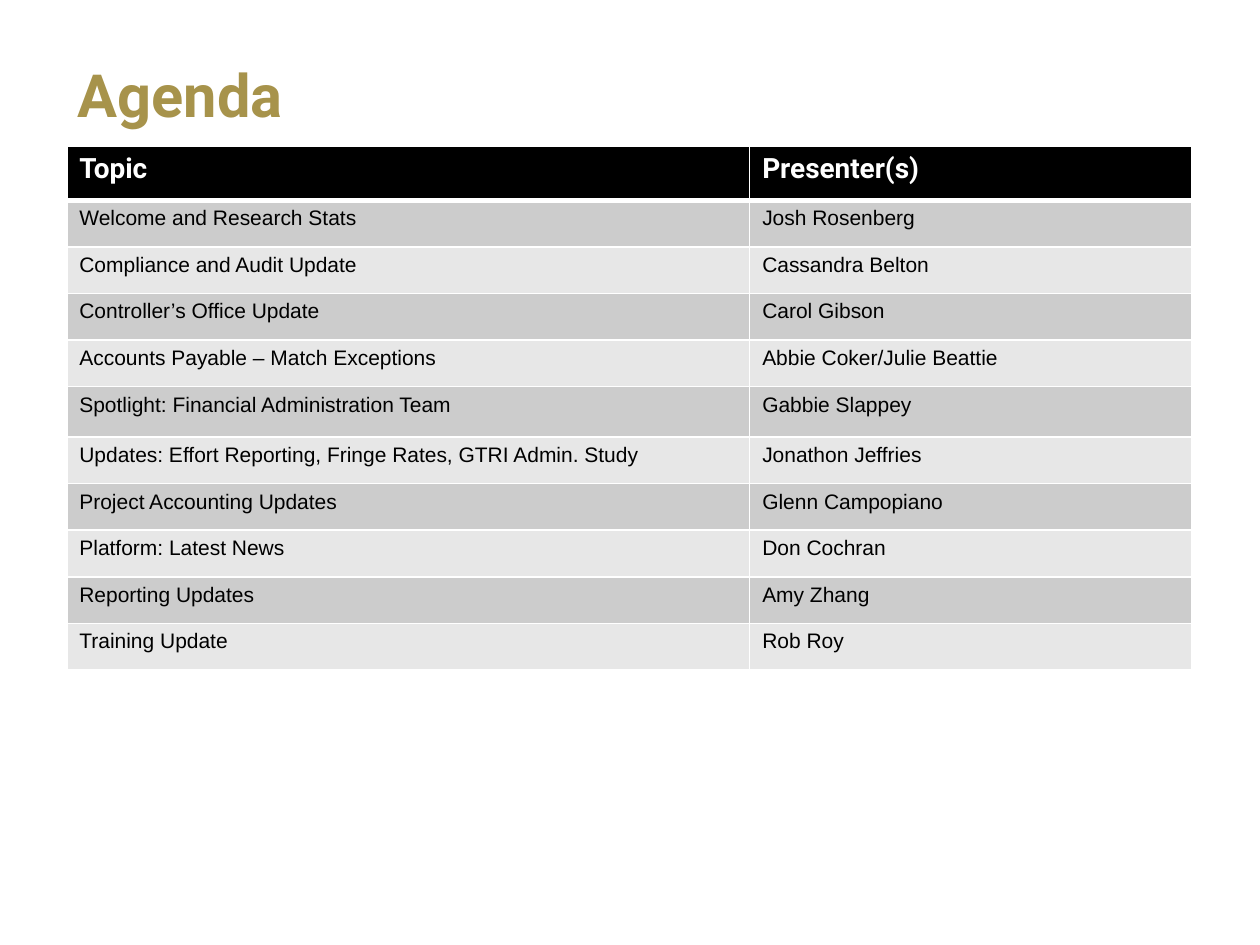
from lxml import etree
from pptx import Presentation
from pptx.dml.color import RGBColor
from pptx.enum.text import MSO_ANCHOR as Anchor
from pptx.oxml.ns import qn
from pptx.util import Inches, Pt

COLORS = {
    "gold": "A7934B",
    "black": "000000",
    "white": "FFFFFF",
    "dark_band": "CCCCCC",
    "light_band": "E7E7E7",
}

# Text formats
TITLE = {"name": "Roboto", "size": Pt(34), "bold": True, "color": "gold"}
HEADER = {"name": "Roboto", "size": Pt(16), "bold": True, "color": "white"}
BODY = {"name": "Arial", "size": Pt(12), "bold": False, "color": "black"}

AGENDA = [
    ("Topic", "Presenter(s)"),
    ("Welcome and Research Stats", "Josh Rosenberg"),
    ("Compliance and Audit Update", "Cassandra Belton"),
    ("Controller’s Office Update", "Carol Gibson"),
    ("Accounts Payable – Match Exceptions", "Abbie Coker/Julie Beattie"),
    ("Spotlight: Financial Administration Team", "Gabbie Slappey"),
    ("Updates: Effort Reporting, Fringe Rates, GTRI Admin. Study", "Jonathon Jeffries"),
    ("Project Accounting Updates", "Glenn Campopiano"),
    ("Platform: Latest News", "Don Cochran"),
    ("Reporting Updates", "Amy Zhang"),
    ("Training Update", "Rob Roy"),
]
COLUMN_WIDTHS = (5.42, 3.51)
ROW_HEIGHT = 0.37
SPECIAL_HEIGHTS = {0: 0.43, 5: 0.4}


def rgb(name):
    return RGBColor.from_string(COLORS[name])


def write_text(paragraph, text, text_format):
    run = paragraph.add_run()
    run.text = text
    for attribute, value in text_format.items():
        if attribute == "color":
            run.font.color.rgb = rgb(value)
        else:
            setattr(run.font, attribute, value)


def add_title(slide, text):
    box = slide.shapes.add_textbox(Inches(0.52), Inches(0.09), Inches(8.06), Inches(1.38))
    frame = box.text_frame
    frame.word_wrap = True
    frame.vertical_anchor = Anchor.MIDDLE
    paragraph = frame.paragraphs[0]
    paragraph.line_spacing = 0.9
    write_text(paragraph, text, TITLE)


def set_borders(cell, widths):
    properties = cell._tc.get_or_add_tcPr()
    for side, width in widths.items():
        line = etree.SubElement(properties, qn(f"a:ln{side}"), w=str(Pt(width)))
        fill = etree.SubElement(line, qn("a:solidFill"))
        etree.SubElement(fill, qn("a:srgbClr"), val=COLORS["white"])


def style_cell(cell, row):
    # A thick rule separates the header from the banded rows
    set_borders(cell, {"L": 1, "R": 1, "T": 3 if row == 1 else 1, "B": 3 if row == 0 else 1})
    band = "dark_band" if row % 2 else "light_band"
    cell.fill.solid()
    cell.fill.fore_color.rgb = rgb("black" if row == 0 else band)


def add_agenda_table(slide, rows):
    heights = [SPECIAL_HEIGHTS.get(row, ROW_HEIGHT) for row in range(len(rows))]
    table = slide.shapes.add_table(
        len(rows), len(COLUMN_WIDTHS), Inches(0.53), Inches(1.16),
        Inches(sum(COLUMN_WIDTHS)), Inches(sum(heights)),
    ).table
    for column, width in zip(table.columns, COLUMN_WIDTHS):
        column.width = Inches(width)
    for row, (texts, height) in enumerate(zip(rows, heights)):
        table.rows[row].height = Inches(height)
        for column, text in enumerate(texts):
            cell = table.cell(row, column)
            style_cell(cell, row)
            write_text(cell.text_frame.paragraphs[0], text, BODY if row else HEADER)


def main():
    presentation = Presentation()
    presentation.slide_width = Inches(10)
    presentation.slide_height = Inches(7.5)
    slide = presentation.slides.add_slide(presentation.slide_layouts[6])

    # Heading
    add_title(slide, "Agenda")

    # Topics and presenters
    add_agenda_table(slide, AGENDA)

    presentation.save("out.pptx")


if __name__ == "__main__":
    main()
